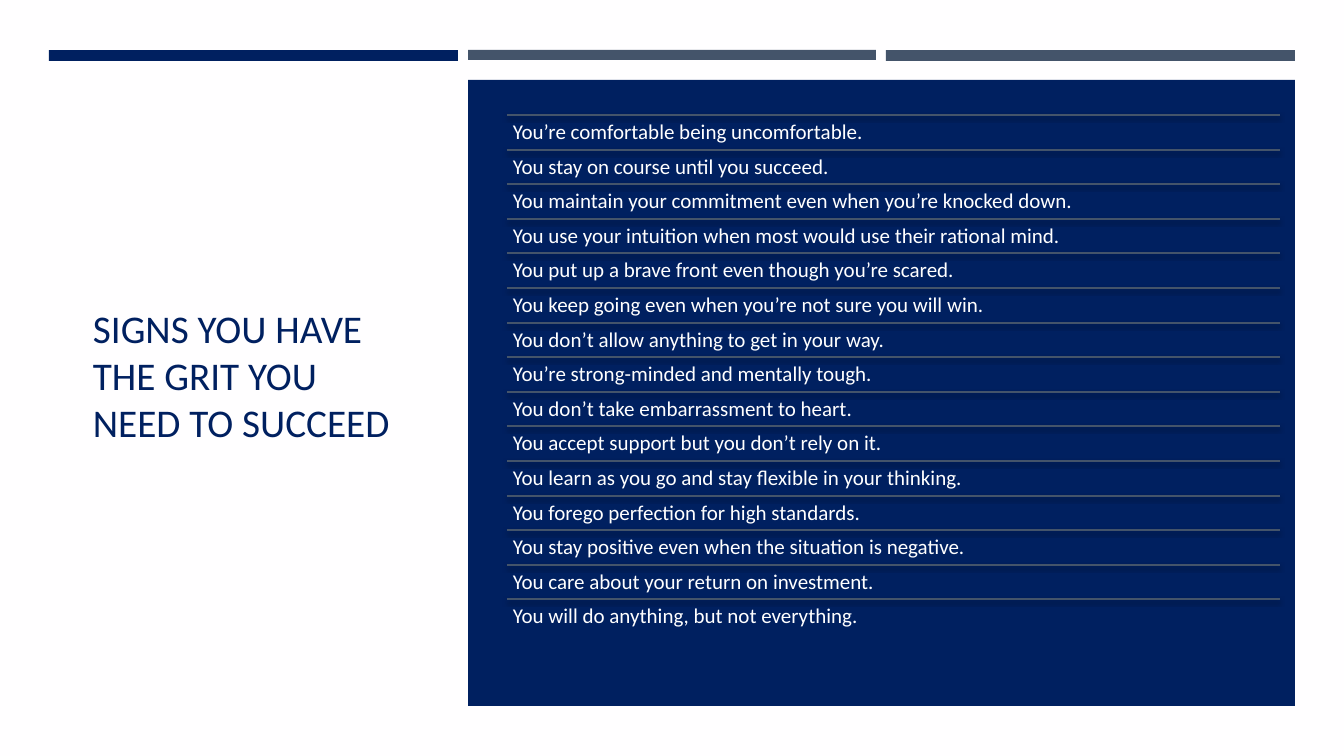
from dataclasses import dataclass

from lxml.etree import SubElement
from pptx import Presentation
from pptx.dml.color import RGBColor
from pptx.enum.shapes import MSO_CONNECTOR, MSO_SHAPE
from pptx.enum.text import MSO_ANCHOR
from pptx.oxml.ns import qn
from pptx.slide import Slide
from pptx.util import Pt

SLIDE_WIDTH, SLIDE_HEIGHT = 1344, 756
EMU_PER_PX = 12192000 / SLIDE_WIDTH
FONT = "Calibri"
COLORS = {
    "paper": "FFFEFF",
    "navy": "002060",
    "slate": "44546A",
    "white": "FFFFFF",
    "shadow": "000000",
}
TITLE = "SIGNS YOU HAVE THE GRIT YOU NEED TO SUCCEED"
SIGNS = [
    "You’re comfortable being uncomfortable.",
    "You stay on course until you succeed.",
    "You maintain your commitment even when you’re knocked down.",
    "You use your intuition when most would use their rational mind.",
    "You put up a brave front even though you’re scared.",
    "You keep going even when you’re not sure you will win.",
    "You don’t allow anything to get in your way.",
    "You’re strong-minded and mentally tough.",
    "You don’t take embarrassment to heart.",
    "You accept support but you don’t rely on it.",
    "You learn as you go and stay flexible in your thinking.",
    "You forego perfection for high standards.",
    "You stay positive even when the situation is negative.",
    "You care about your return on investment.",
    "You will do anything, but not everything.",
]


@dataclass(frozen=True)
class Box:
    left: int
    top: int
    width: int
    height: int

    def emu(self) -> tuple[int, int, int, int]:
        return px(self.left), px(self.top), px(self.width), px(self.height)


@dataclass(frozen=True)
class Panel:
    box: Box
    color: str


@dataclass(frozen=True)
class TextStyle:
    size: int
    color: str
    anchor: MSO_ANCHOR
    side_inset: int
    end_inset: int
    line_spacing: float


PANELS = [
    Panel(Box(0, 0, SLIDE_WIDTH, SLIDE_HEIGHT), "paper"),
    Panel(Box(49, 50, 409, 11), "navy"),
    Panel(Box(468, 50, 408, 10), "slate"),
    Panel(Box(886, 50, 409, 11), "slate"),
    Panel(Box(468, 80, 827, 626), "navy"),
]
TITLE_BOX = Box(83, 115, 337, 519)
LIST_BOX = Box(507, 115, 773, 519)
TITLE_STYLE = TextStyle(28, "navy", MSO_ANCHOR.MIDDLE, 10, 5, 1.0)
SIGN_STYLE = TextStyle(15, "white", MSO_ANCHOR.TOP, 6, 6, 0.9)


def px(length: int) -> int:
    """Turn pixels into EMU."""
    return round(length * EMU_PER_PX)


def rgb(name: str) -> RGBColor:
    return RGBColor.from_string(COLORS[name])


def add_panel(slide: Slide, panel: Panel) -> None:
    shape = slide.shapes.add_shape(MSO_SHAPE.RECTANGLE, *panel.box.emu())
    shape.shadow.inherit = False
    shape.fill.solid()
    shape.fill.fore_color.rgb = rgb(panel.color)
    shape.line.fill.background()


def add_text(slide: Slide, box: Box, text: str, style: TextStyle) -> None:
    frame = slide.shapes.add_textbox(*box.emu()).text_frame
    frame.word_wrap = True
    frame.vertical_anchor = style.anchor
    frame.margin_left = frame.margin_right = px(style.side_inset)
    frame.margin_top = frame.margin_bottom = px(style.end_inset)
    paragraph = frame.paragraphs[0]
    paragraph.line_spacing = style.line_spacing
    run = paragraph.add_run()
    run.text = text
    run.font.name = FONT
    run.font.size = Pt(style.size)
    run.font.color.rgb = rgb(style.color)


def add_divider(slide: Slide, left: int, top: int, width: int) -> None:
    """Draw a thin rule with a soft shadow below it."""
    line = slide.shapes.add_connector(
        MSO_CONNECTOR.STRAIGHT, px(left), px(top), px(left + width), px(top)
    )
    line.line.color.rgb = rgb("slate")
    line.line.width = Pt(1)
    effects = SubElement(line._element.spPr, qn("a:effectLst"))
    shadow = SubElement(
        effects,
        qn("a:outerShdw"),
        blurRad=str(Pt(3)),
        dist=str(Pt(2)),
        dir="5400000",
        rotWithShape="0",
    )
    color = SubElement(shadow, qn("a:srgbClr"), val=COLORS["shadow"])
    SubElement(color, qn("a:alpha"), val="55000")


def add_sign_list(slide: Slide) -> None:
    row_height = LIST_BOX.height / len(SIGNS)
    for index, sign in enumerate(SIGNS):
        top = LIST_BOX.top + round(index * row_height)
        row = Box(LIST_BOX.left, top, LIST_BOX.width, round(row_height))
        add_divider(slide, row.left, row.top, row.width)
        add_text(slide, row, sign, SIGN_STYLE)


def main() -> None:
    presentation = Presentation()
    presentation.slide_width = px(SLIDE_WIDTH)
    presentation.slide_height = px(SLIDE_HEIGHT)
    slide = presentation.slides.add_slide(presentation.slide_layouts[6])
    for panel in PANELS:
        add_panel(slide, panel)
    add_text(slide, TITLE_BOX, TITLE, TITLE_STYLE)
    add_sign_list(slide)
    presentation.save("out.pptx")


if __name__ == "__main__":
    main()
